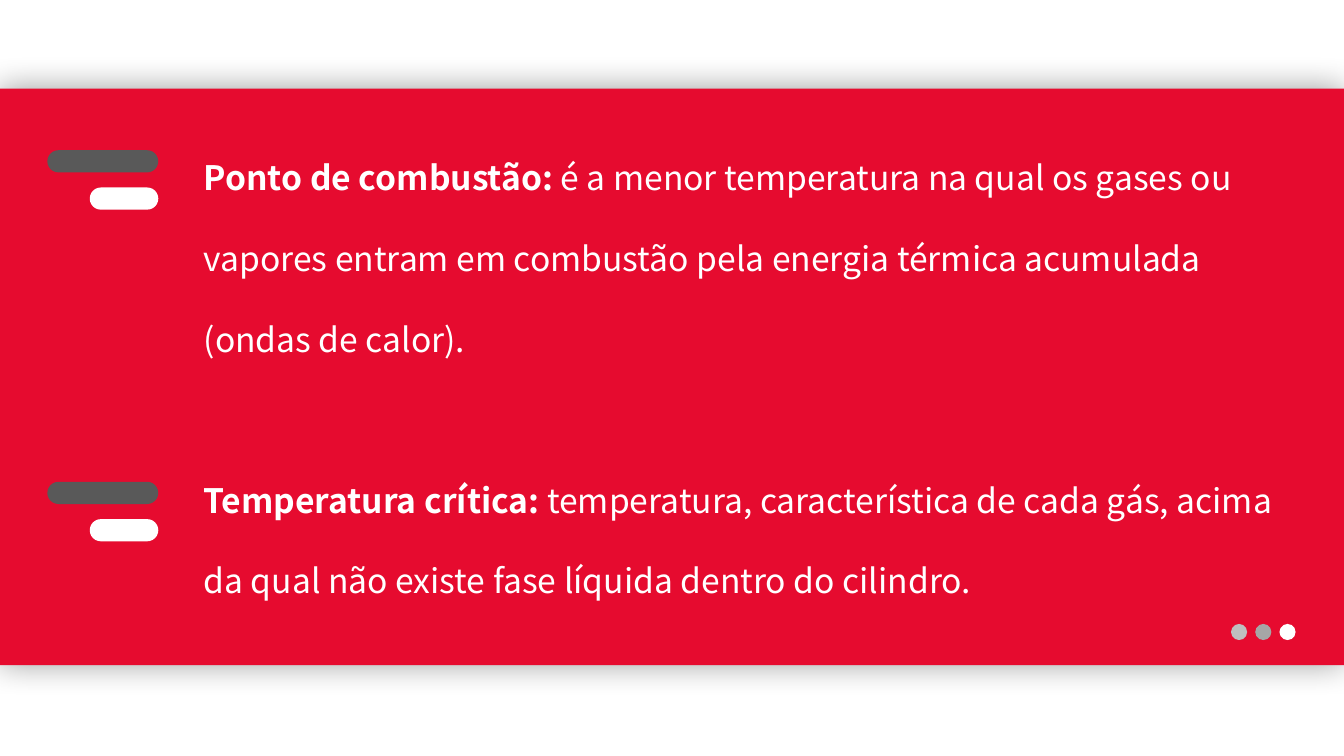
import dataclasses

import lxml.etree
import pptx
import pptx.dml.color
import pptx.enum.shapes
import pptx.enum.text
import pptx.oxml
import pptx.oxml.ns
import pptx.util

Inches = pptx.util.Inches
MSO_SHAPE = pptx.enum.shapes.MSO_SHAPE


@dataclasses.dataclass(frozen=True)
class Theme:
    font: str = "Noto Sans CJK SC"
    body_size: int = 24
    line_spacing: float = 2.0
    paragraph_gap: float = 57.5
    shadow_blur: int = 24
    shadow_opacity: int = 40
    black: str = "000000"
    white: str = "FFFFFF"
    red: str = "E60B2F"
    dark_gray: str = "595959"
    mid_gray: str = "A6A6A6"
    light_gray: str = "BFBFBF"


class SlideBuilder:
    def __init__(self, prs, theme):
        self.theme = theme
        self.s = prs.slides.add_slide(prs.slide_layouts[1])
        title = self.s.shapes.title.element
        title.getparent().remove(title)

    def shape(self, shapes, kind, box, color):
        sp = shapes.add_shape(kind, *map(Inches, box))
        sp.shadow.inherit = False
        sp.fill.solid()
        sp.fill.fore_color.rgb = pptx.dml.color.RGBColor.from_string(color)
        sp.line.fill.background()
        return sp

    def band(self, box):
        t = self.theme
        sp = self.shape(self.s.shapes, MSO_SHAPE.RECTANGLE, box, t.red)
        effects = sp.element.spPr.find(pptx.oxml.ns.qn("a:effectLst"))
        effects.append(pptx.oxml.parse_xml(
            f'<a:outerShdw {pptx.oxml.ns.nsdecls("a")} blurRad="{pptx.util.Pt(t.shadow_blur)}" '
            f'dist="0" dir="0" algn="ctr" rotWithShape="0"><a:srgbClr val="{t.black}">'
            f'<a:alpha val="{t.shadow_opacity * 1000}"/></a:srgbClr></a:outerShdw>'))

    def dots(self, left, top, size, pitch, colors):
        group = self.s.shapes.add_group_shape()
        for i, color in enumerate(colors):
            self.shape(group.shapes, MSO_SHAPE.OVAL, (left + i * pitch, top, size, size), color)

    def marker(self, right, top):
        group = self.s.shapes.add_group_shape()
        bars = [(1.1, 0, self.theme.dark_gray), (0.68, 0.37, self.theme.white)]
        for width, drop, color in bars:
            box = (right - width, top + drop, width, 0.22)
            sp = self.shape(group.shapes, MSO_SHAPE.ROUNDED_RECTANGLE, box, color)
            sp.adjustments[0] = 0.5

    def definitions(self, box, entries):
        sp = self.s.placeholders[1]
        sp.left, sp.top, sp.width, sp.height = map(Inches, box)
        sp.element.getparent().append(sp.element)
        tf = sp.text_frame
        tf.word_wrap = True
        tf.auto_size = pptx.enum.text.MSO_AUTO_SIZE.NONE
        for i, (term, meaning) in enumerate(entries):
            p = tf.add_paragraph() if i else tf.paragraphs[0]
            p.line_spacing = self.theme.line_spacing
            p.space_before = pptx.util.Pt(self.theme.paragraph_gap if i else 0)
            pPr = p._p.get_or_add_pPr()
            pPr.set("marL", "0")
            pPr.set("indent", "0")
            lxml.etree.SubElement(pPr, pptx.oxml.ns.qn("a:buNone"))
            self.run(p, term + ": ", True)
            self.run(p, meaning, False)

    def run(self, p, text, bold):
        r = p.add_run()
        r.text = text
        r.font.name = self.theme.font
        r.font.size = pptx.util.Pt(self.theme.body_size)
        r.font.bold = bold
        r.font.color.rgb = pptx.dml.color.RGBColor.from_string(self.theme.white)


def main():
    prs = pptx.Presentation()
    prs.slide_width, prs.slide_height = Inches(13.33), Inches(7.5)
    theme = Theme()
    slide = SlideBuilder(prs, theme)
    slide.band((0, 0.88, 13.33, 5.72))
    slide.dots(12.21, 6.19, 0.16, 0.24, [theme.light_gray, theme.mid_gray, theme.white])
    slide.definitions((1.92, 1.11, 11.07, 4.83), [
        ("Ponto de combustão",
         "é a menor temperatura na qual os gases ou vapores entram em combustão "
         "pela energia térmica acumulada (ondas de calor)."),
        ("Temperatura crítica",
         "temperatura, característica de cada gás, acima da qual não existe "
         "fase líquida dentro do cilindro."),
    ])
    for top in (1.49, 4.78):
        slide.marker(1.57, top)
    prs.save("out.pptx")


if __name__ == "__main__":
    main()
